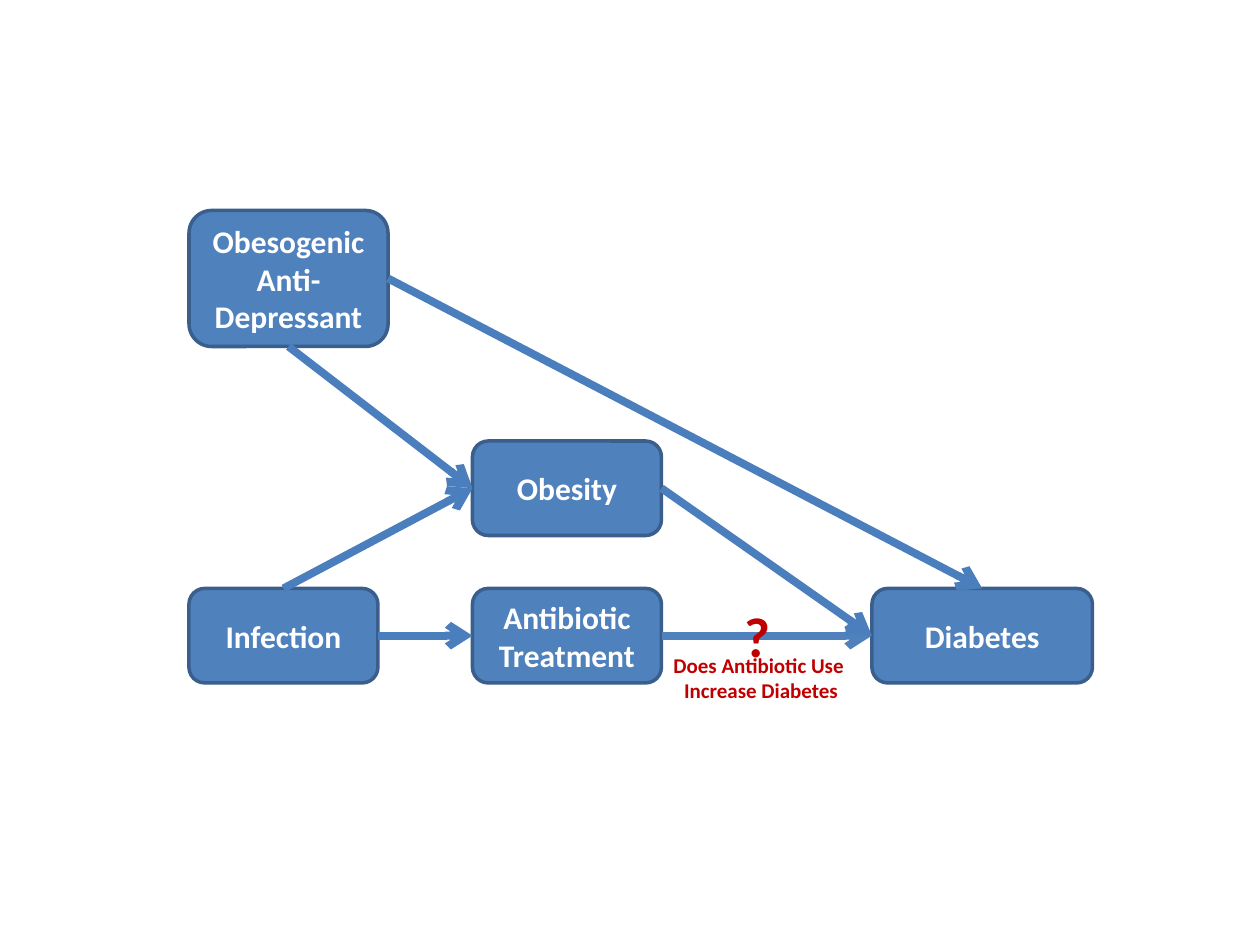
from dataclasses import dataclass

from lxml.etree import SubElement
from pptx import Presentation
from pptx.dml.color import RGBColor
from pptx.enum.shapes import MSO_CONNECTOR as Connector, MSO_SHAPE as Shape
from pptx.enum.text import MSO_ANCHOR as Anchor, PP_ALIGN as Align
from pptx.oxml.ns import qn
from pptx.util import Inches, Pt


@dataclass(frozen=True)
class Theme:
    font: str = "Calibri"
    box: RGBColor = RGBColor(0x4F, 0x81, 0xBD)
    border: RGBColor = RGBColor(0x3A, 0x5F, 0x8C)
    arrow: RGBColor = RGBColor(0x4B, 0x7E, 0xBC)
    white: RGBColor = RGBColor(0xFF, 0xFF, 0xFF)
    question: RGBColor = RGBColor(0xC0, 0x00, 0x00)
    box_size: int = 18
    mark_size: int = 32
    caption_size: int = 12
    border_width: float = 2
    arrow_width: float = 4.5


THEME = Theme()

# Connection sites of a rounded rectangle
TOP, LEFT, BOTTOM, RIGHT = range(4)

# Columns and rows shared by the boxes
COLUMN_1, COLUMN_2, COLUMN_3 = 1.5, 3.75, 6.92
MIDDLE_ROW, BOTTOM_ROW = 3.5, 4.67
BOX_WIDTH, BOX_HEIGHT = 1.5, 0.75

BOXES = {
    "Obesogenic Anti-Depressant": (COLUMN_1, 1.67, 1.58, 1.08),
    "Obesity": (COLUMN_2, MIDDLE_ROW, BOX_WIDTH, BOX_HEIGHT),
    "Diabetes": (COLUMN_3, BOTTOM_ROW, 1.75, BOX_HEIGHT),
    "Infection": (COLUMN_1, BOTTOM_ROW, BOX_WIDTH, BOX_HEIGHT),
    "Antibiotic Treatment": (COLUMN_2, BOTTOM_ROW, BOX_WIDTH, BOX_HEIGHT),
}

ARROWS = [
    ("Obesogenic Anti-Depressant", RIGHT, "Diabetes", TOP, THEME.arrow),
    ("Obesogenic Anti-Depressant", BOTTOM, "Obesity", LEFT, THEME.arrow),
    ("Infection", TOP, "Obesity", LEFT, THEME.arrow),
    ("Infection", RIGHT, "Antibiotic Treatment", LEFT, THEME.arrow),
    ("Antibiotic Treatment", RIGHT, "Diabetes", LEFT, THEME.box),
    ("Obesity", RIGHT, "Diabetes", LEFT, THEME.arrow),
]


def add_text_shape(shapes, kind, box, lines, size, color):
    """Add a preset shape with centred bold text, one run per line."""
    shape = shapes.add_shape(kind, *map(Inches, box))
    shape.shadow.inherit = False
    frame = shape.text_frame
    frame.word_wrap = True
    frame.vertical_anchor = Anchor.MIDDLE
    paragraph = frame.paragraphs[0]
    paragraph.alignment = Align.CENTER
    for index, line in enumerate(lines):
        if index:
            paragraph.add_line_break()
        run = paragraph.add_run()
        run.text = line
        run.font.name = THEME.font
        run.font.size = Pt(size)
        run.font.bold = True
        run.font.color.rgb = color
    return shape


def add_box(shapes, label, box):
    shape = add_text_shape(shapes, Shape.ROUNDED_RECTANGLE, box, [label],
                           THEME.box_size, THEME.white)
    shape.fill.solid()
    shape.fill.fore_color.rgb = THEME.box
    shape.line.color.rgb = THEME.border
    shape.line.width = Pt(THEME.border_width)
    return shape


def add_label(shapes, box, lines, size):
    """Add red text in an ellipse without fill or line."""
    shape = add_text_shape(shapes, Shape.OVAL, box, lines, size, THEME.question)
    shape.fill.background()
    shape.line.fill.background()


def add_arrow(shapes, start, start_site, end, end_site, color):
    connector = shapes.add_connector(Connector.STRAIGHT, 0, 0, 0, 0)
    connector.begin_connect(start, start_site)
    connector.end_connect(end, end_site)
    connector.line.color.rgb = color
    connector.line.width = Pt(THEME.arrow_width)
    properties = connector.line._get_or_add_ln()
    SubElement(properties, qn("a:tailEnd"), type="arrow")
    SubElement(properties.getparent(), qn("a:effectLst"))


def add_causal_diagram(slide):
    shapes = slide.shapes.add_group_shape().shapes
    boxes = {label: add_box(shapes, label, box) for label, box in BOXES.items()}
    for start, start_site, end, end_site, color in ARROWS:
        add_arrow(shapes, boxes[start], start_site, boxes[end], end_site, color)
    add_label(shapes, (5.75, 4.83, 0.42, 0.42), ["?"], THEME.mark_size)


def main():
    presentation = Presentation()
    presentation.slide_width = Inches(10)
    presentation.slide_height = Inches(7.5)
    slide = presentation.slides.add_slide(presentation.slide_layouts[6])

    # Boxes, arrows and question mark
    add_causal_diagram(slide)

    # Caption under the questioned arrow
    add_label(slide.shapes, (3.33, 5.17, 5.42, 0.42),
              ["Does Antibiotic Use ", "Increase Diabetes"], THEME.caption_size)

    presentation.save("out.pptx")


if __name__ == "__main__":
    main()
